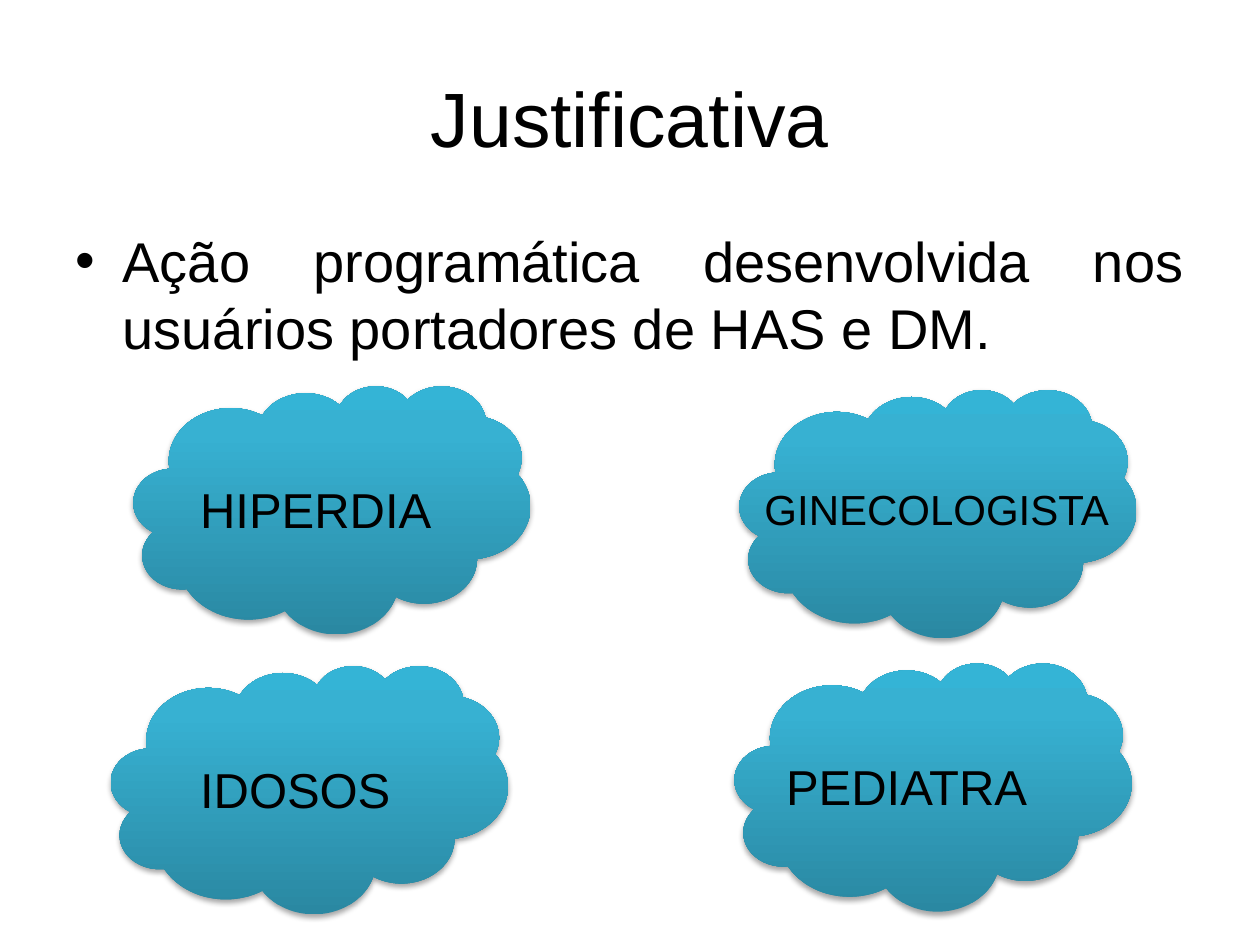
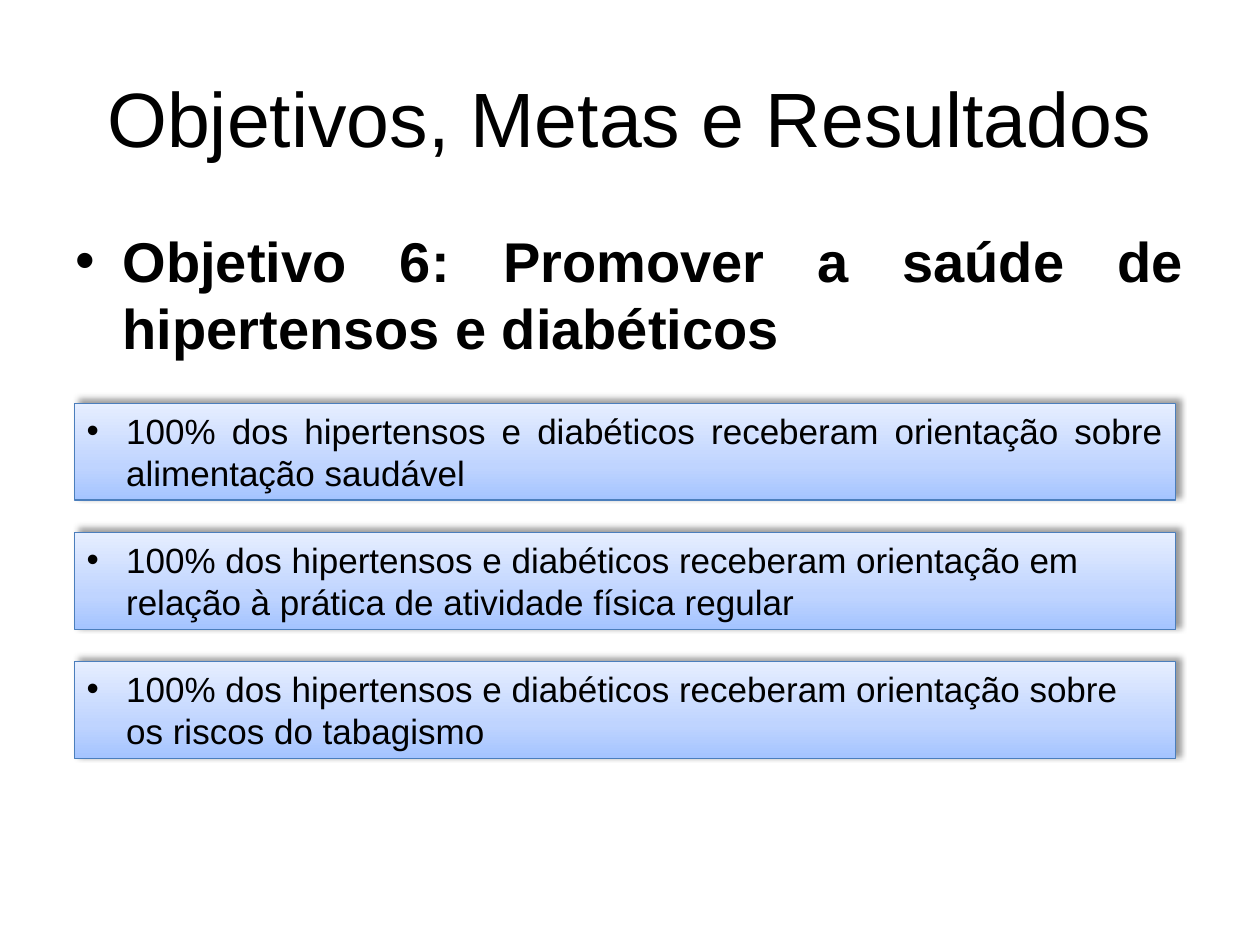
from dataclasses import dataclass

from lxml import etree
from pptx import Presentation
from pptx.dml.color import RGBColor
from pptx.enum.shapes import MSO_SHAPE
from pptx.enum.text import MSO_ANCHOR, MSO_AUTO_SIZE, PP_ALIGN
from pptx.oxml.ns import qn
from pptx.util import Pt

CLOUD, RECT = MSO_SHAPE.CLOUD, MSO_SHAPE.RECTANGLE
TOP, MIDDLE = MSO_ANCHOR.TOP, MSO_ANCHOR.MIDDLE
GROW, FIXED = MSO_AUTO_SIZE.SHAPE_TO_FIT_TEXT, MSO_AUTO_SIZE.NONE
LEFT, CENTER, JUSTIFY = PP_ALIGN.LEFT, PP_ALIGN.CENTER, PP_ALIGN.JUSTIFY


@dataclass(frozen=True)
class Theme:
    font: str = "Arial"
    ink: str = "000000"
    edge: str = "4B7EBC"
    # Gradient stops run from bottom to top: percent, colour
    teal: tuple = ((0, "2A88A2"), (80, "37B1D2"), (100, "34B4D6"))
    pale: tuple = ((0, "A4C4FF"), (35, "BFD4FF"), (100, "E6EEFF"))
    # Shadows: opacity percent, blur, distance, clockwise angle
    drop: tuple = (35, 3.1, 1.8, 90)
    lift: tuple = (40, 4, 3, 315)
    title: int = 44
    body: int = 32
    label: int = 28
    small: int = 24
    card: int = 20


def node(parent, tag, **attrs):
    """Add a DrawingML child element."""
    child = etree.SubElement(parent, qn(tag))
    for key, value in attrs.items():
        child.set(key, str(value))
    return child


class Deck:
    def __init__(self, theme):
        self.theme = theme
        self.prs = Presentation()
        self.prs.slide_width, self.prs.slide_height = Pt(720), Pt(540)
        self.slide = None

    def page(self, title, lead, bold=False):
        """Start a slide with its title and leading bullet."""
        self.slide = self.prs.slides.add_slide(self.prs.slide_layouts[6])
        self.text((36, 21.6, 648, 90), title, self.theme.title, CENTER, MIDDLE)
        box = self.text((36, 126, 648, 356.4), lead, self.theme.body, JUSTIFY, bold=bold)
        self.bullet(box, 27)
        box.text_frame.paragraphs[0].space_before = Pt(6.4)

    def label(self, shape, words, size, align=LEFT, anchor=TOP, bold=False, fit=FIXED):
        frame = shape.text_frame
        frame.text = words
        frame.word_wrap = True
        frame.auto_size = fit
        frame.vertical_anchor = anchor
        para = frame.paragraphs[0]
        para.alignment = align
        font = para.runs[0].font
        font.name, font.size, font.bold = self.theme.font, Pt(size), bold
        font.color.rgb = RGBColor.from_string(self.theme.ink)

    def text(self, area, words, size, *args, **style):
        box = self.slide.shapes.add_textbox(*map(Pt, area))
        self.label(box, words, size, *args, **style)
        return box

    def bullet(self, shape, indent):
        props = shape.text_frame.paragraphs[0]._p.get_or_add_pPr()
        props.set("marL", str(Pt(indent)))
        props.set("indent", str(-Pt(indent)))
        node(props, "a:buFont", typeface=self.theme.font)
        node(props, "a:buChar", char="•")

    def shape(self, kind, area, stops, shade):
        """Add a shape with an upward gradient and a soft shadow."""
        form = self.slide.shapes.add_shape(kind, *map(Pt, area))
        form.fill.gradient()
        form.fill.gradient_angle = 90
        props = form._element.spPr
        ramp = props.find(".//" + qn("a:gsLst"))
        for old in list(ramp):
            ramp.remove(old)
        for place, tint in stops:
            stop = node(ramp, "a:gs", pos=place * 1000)
            node(stop, "a:srgbClr", val=tint)
        form.line.fill.background()

        alpha, blur, dist, angle = shade
        form.shadow.inherit = False
        glow = node(props.find(qn("a:effectLst")), "a:outerShdw", blurRad=Pt(blur),
                    dist=Pt(dist), dir=angle * 60000, rotWithShape=0)
        tone = node(glow, "a:srgbClr", val=self.theme.ink)
        node(tone, "a:alpha", val=alpha * 1000)
        return form

    def cloud(self, x, y):
        self.shape(CLOUD, (x, y, 226.8, 141.8), self.theme.teal, self.theme.drop)

    def card(self, y, words, align):
        form = self.shape(RECT, (42.5, y, 629.3, 55.4), self.theme.pale, self.theme.lift)
        form.line.color.rgb = RGBColor.from_string(self.theme.edge)
        form.line.width = Pt(0.75)
        self.label(form, words, self.theme.card, align, fit=GROW)
        self.bullet(form, 22.5)


def main():
    theme = Theme()
    deck = Deck(theme)

    # Slide 1: care groups in clouds
    deck.page("Justificativa",
              "Ação programática desenvolvida nos usuários portadores de HAS e DM.")
    # Cloud left and top, then label, its left, width and size
    groups = (
        (419.8, 378.7, "PEDIATRA", 442.1, 181.4, theme.label),
        (422.6, 222.5, "GINECOLOGISTA", 429.8, 230.4, theme.small),
        (63.4, 380.2, "IDOSOS", 107.3, 139, theme.label),
        (76.3, 220.3, "HIPERDIA", 107.3, 164.2, theme.label),
    )
    for x, y, *_ in groups:
        deck.cloud(x, y)
    for _, y, name, left, width, size in groups:
        deck.text((left, y + 50, width, size * 1.2 + 7.2), name, size, fit=GROW)

    # Slide 2: results in evenly spaced cards
    deck.page("Objetivos, Metas e Resultados",
              "Objetivo 6: Promover a saúde de hipertensos e diabéticos", bold=True)
    results = (
        ("alimentação saudável", "sobre", JUSTIFY),
        ("relação à prática de atividade física regular", "em", LEFT),
        ("os riscos do tabagismo", "sobre", LEFT),
    )
    for row, (topic, link, align) in enumerate(results):
        words = f"100% dos hipertensos e diabéticos receberam orientação {link} {topic}"
        deck.card(230.4 + row * 73.8, words, align)

    deck.prs.save("out.pptx")


if __name__ == "__main__":
    main()
